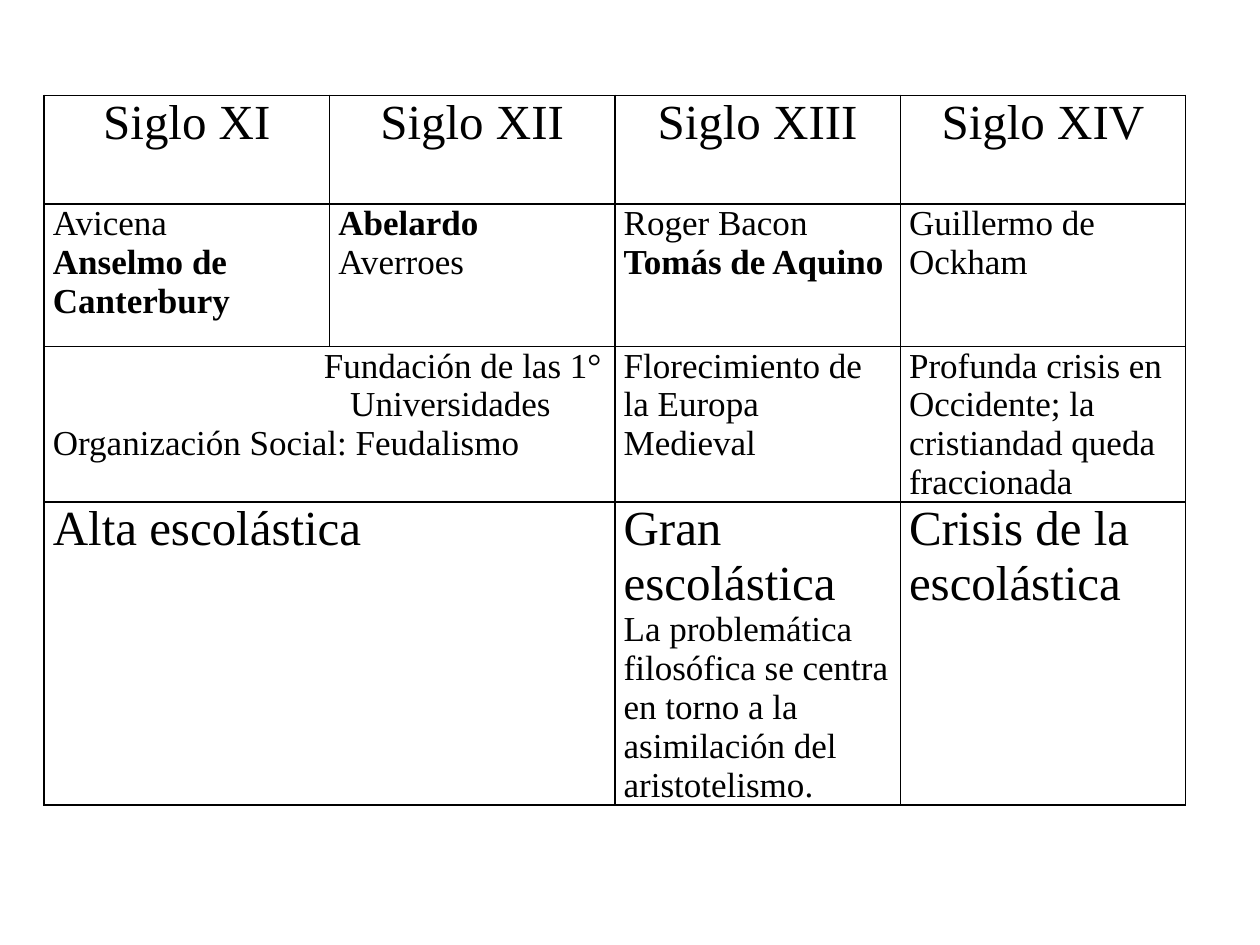
from lxml.etree import SubElement
from pptx import Presentation
from pptx.dml.color import RGBColor
from pptx.enum.text import PP_ALIGN
from pptx.oxml.ns import qn
from pptx.util import Inches, Pt

THEME = {
    "font": "Times New Roman",
    "ink": "000000",
    "heading": Pt(28),
    "body": Pt(20),
    "border": Pt(1),
}

presentation = Presentation()
presentation.slide_width, presentation.slide_height = Inches(10), Inches(7.5)
W, H = presentation.slide_width, presentation.slide_height
slide = presentation.slides.add_slide(presentation.slide_layouts[6])

# Content: (row, column, columns spanned) -> paragraphs of (text, format)
HEADING = {"size": THEME["heading"]}
BOLD = {"bold": True}
centuries = {
    (0, column, 1): [(f"Siglo {numeral}", HEADING)]
    for column, numeral in enumerate(["XI", "XII", "XIII", "XIV"])
}
thinkers = {
    (1, 0, 1): [("Avicena", {}), ("Anselmo de Canterbury", BOLD)],
    (1, 1, 1): [("Abelardo", BOLD), ("Averroes", {})],
    (1, 2, 1): [("Roger Bacon", {}), ("Tomás de Aquino", BOLD)],
    (1, 3, 1): [("Guillermo de Ockham", {})],
}
context = {
    (2, 0, 2): [
        ("Fundación de las 1°", {}),
        ("Universidades", {}),
        ("Organización Social: Feudalismo", {}),
    ],
    (2, 2, 1): [("Florecimiento de la Europa Medieval", {})],
    (2, 3, 1): [("Profunda crisis en Occidente; la cristiandad queda fraccionada", {})],
}
scholasticism = {
    (3, 0, 2): [("Alta escolástica", HEADING)],
    (3, 2, 1): [
        ("Gran escolástica", HEADING),
        ("La problemática filosófica se centra en torno a la asimilación del aristotelismo.", {}),
    ],
    (3, 3, 1): [("Crisis de la escolástica", HEADING)],
}
indents = {"Fundación de las 1°": 0.215, "Universidades": 0.236}  # shares of slide width

# Table grid
row_shares = [0.115, 0.151, 0.164, 0.32]
timeline = slide.shapes.add_table(
    len(row_shares), 4, int(W * 0.035), int(H * 0.101), int(W * 0.906), int(H * sum(row_shares))
).table
for flag in ("first_row", "horz_banding"):
    setattr(timeline, flag, False)
for row, share in zip(timeline.rows, row_shares):
    row.height = int(H * share)

# Borders, margins and no fill on every cell
cell_margins = {
    "margin_left": Inches(0.07), "margin_right": Inches(0.07),
    "margin_top": 0, "margin_bottom": 0,
}
for cell in timeline.iter_cells():
    for name, value in cell_margins.items():
        setattr(cell, name, value)
    properties = cell._tc.get_or_add_tcPr()
    for side in ("a:lnL", "a:lnR", "a:lnT", "a:lnB"):
        border = SubElement(properties, qn(side), w=str(THEME["border"]))
        SubElement(SubElement(border, qn("a:solidFill")), qn("a:srgbClr"), val=THEME["ink"])
    cell.fill.background()

# Text
for (row, column, span), lines in (centuries | thinkers | context | scholasticism).items():
    cell = timeline.cell(row, column)
    if span > 1:
        cell.merge(timeline.cell(row, column + span - 1))
    for index, (text, text_format) in enumerate(lines):
        frame = cell.text_frame
        paragraph = frame.add_paragraph() if index else frame.paragraphs[0]
        paragraph.alignment = PP_ALIGN.CENTER if row == 0 else PP_ALIGN.LEFT
        if text in indents:
            paragraph._p.get_or_add_pPr().set("marL", str(int(W * indents[text])))
        run = paragraph.add_run()
        run.text = text
        base = {"name": THEME["font"], "size": THEME["body"], "bold": False}
        for name, value in (base | text_format).items():
            setattr(run.font, name, value)
        run.font.color.rgb = RGBColor.from_string(THEME["ink"])

presentation.save("out.pptx")
